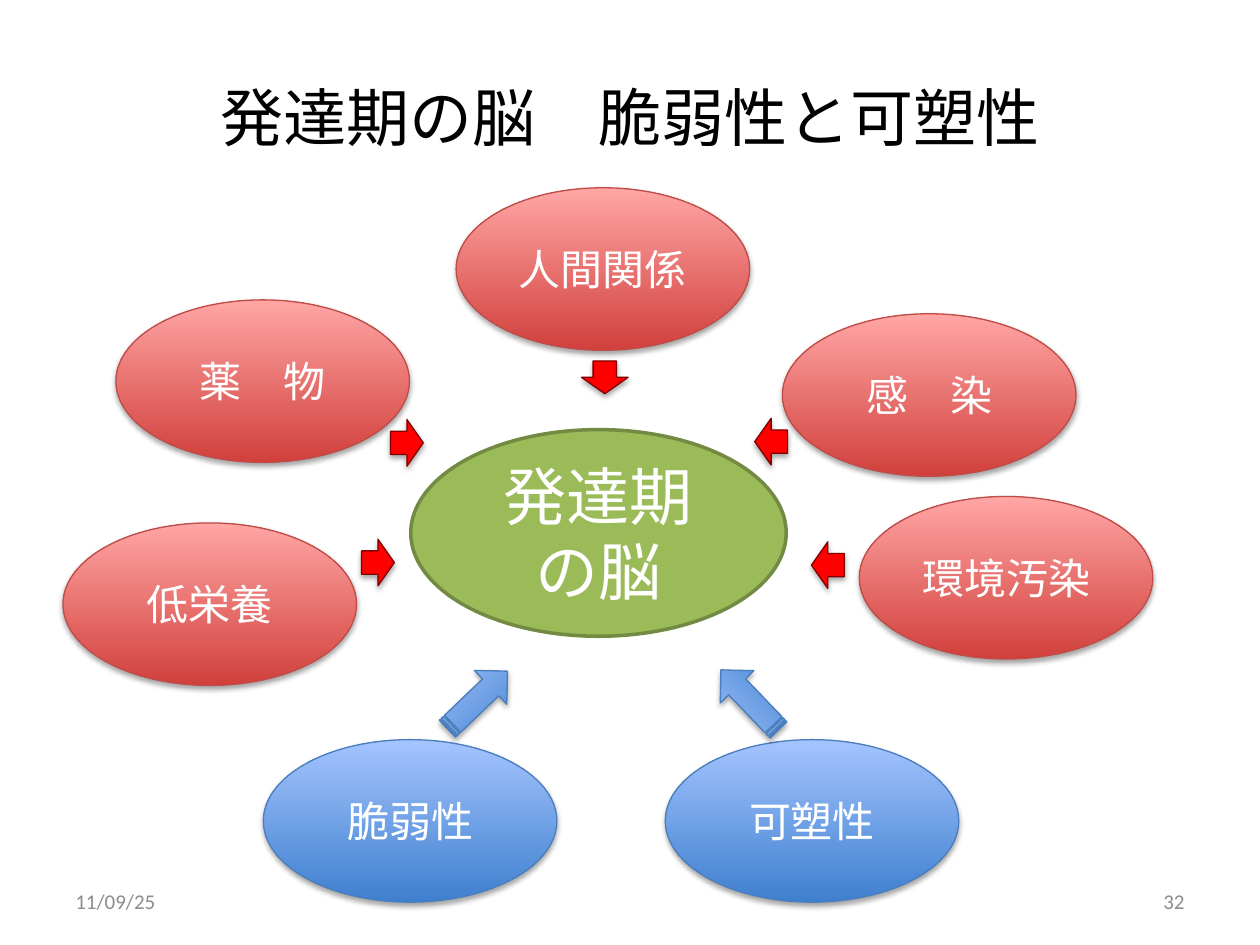
from lxml import etree
from pptx import Presentation
from pptx.dml.color import RGBColor
from pptx.enum.shapes import MSO_SHAPE
from pptx.enum.text import MSO_ANCHOR, PP_ALIGN
from pptx.oxml.ns import qn
from pptx.util import Inches, Pt

ELLIPSE = MSO_SHAPE.OVAL
ARROW = MSO_SHAPE.RIGHT_ARROW
STRIPED_ARROW = MSO_SHAPE.STRIPED_RIGHT_ARROW
LEFT, CENTER, RIGHT = PP_ALIGN.LEFT, PP_ALIGN.CENTER, PP_ALIGN.RIGHT
MIDDLE = MSO_ANCHOR.MIDDLE

# Each style is the fill (bottom and top colour, or a single one) and the line colour
RED = (("D1403C", "FFA6A5"), "BF4C48")
BLUE = (("3F80CE", "A4C4FF"), "4B7EBC")
BRIGHT_RED = (("FF0000",), "800000")
GREEN = (("9BBB59",), "738A42")

FACTOR_SIZE = (2.33, 1.29)
SMALL_ARROW_SIZE = (0.26, 0.37)
LARGE_ARROW_SIZE = (0.66, 0.37)


def rgb(value):
    return RGBColor.from_string(value)


class SlideBuilder:
    font = "Calibri"

    def __init__(self, slide):
        self.slide = slide

    def set_text(self, frame, text, size, color, align):
        frame.word_wrap = True
        frame.vertical_anchor = MIDDLE
        frame.text = text
        paragraph = frame.paragraphs[0]
        paragraph.alignment = align
        font = paragraph.runs[0].font
        font.name = self.font
        font.size = Pt(size)
        font.color.rgb = rgb(color)

    def label(self, text, box, size, color, align):
        textbox = self.slide.shapes.add_textbox(*map(Inches, box))
        self.set_text(textbox.text_frame, text, size, color, align)

    def shape(self, kind, position, size, style, line_width=0.75, shadow=True):
        colors, line_color = style
        shape = self.slide.shapes.add_shape(kind, *map(Inches, position + size))
        if len(colors) == 1:
            shape.fill.solid()
            shape.fill.fore_color.rgb = rgb(colors[0])
        else:
            shape.fill.gradient()
            shape.fill.gradient_angle = 90
            for stop, color in zip(shape.fill.gradient_stops, colors):
                stop.color.rgb = rgb(color)
        shape.line.color.rgb = rgb(line_color)
        shape.line.width = Pt(line_width)
        shape.shadow.inherit = False
        if shadow:
            self.drop_shadow(shape)
        return shape

    def drop_shadow(self, shape):
        effects = shape._element.spPr.find(qn("a:effectLst"))
        outer = etree.SubElement(
            effects, qn("a:outerShdw"), blurRad=str(Pt(3.1)), dist=str(Pt(1.8)),
            dir="5400000", rotWithShape="0")
        black = etree.SubElement(outer, qn("a:srgbClr"), val="000000")
        etree.SubElement(black, qn("a:alpha"), val="35000")

    def factor(self, text, position, style):
        ellipse = self.shape(ELLIPSE, position, FACTOR_SIZE, style)
        self.set_text(ellipse.text_frame, text, 24, "FFFFFF", CENTER)

    def brain(self, text, position, size):
        ellipse = self.shape(ELLIPSE, position, size, GREEN, 2, shadow=False)
        self.set_text(ellipse.text_frame, text, 36, "FFFFFF", CENTER)

    def arrow(self, kind, position, size, style, rotation):
        self.shape(kind, position, size, style).rotation = rotation


def main():
    prs = Presentation()
    prs.slide_width, prs.slide_height = Inches(10), Inches(7.5)
    builder = SlideBuilder(prs.slides.add_slide(prs.slide_layouts[6]))

    builder.label("11/09/25", (0.5, 6.95, 2.33, 0.4), 12, "8C8C8C", LEFT)
    builder.label("発達期の脳　脆弱性と可塑性", (0.5, 0.3, 9, 1.25), 36, "000000", CENTER)

    for name, position in (
        ("人間関係", (3.62, 1.49)),
        ("環境汚染", (6.82, 3.94)),
        ("感　染", (6.21, 2.49)),
        ("薬　物", (0.92, 2.38)),
        ("低栄養", (0.5, 4.15)),
    ):
        builder.factor(name, position, RED)

    builder.brain("発達期の脳", (3.26, 3.41), (2.98, 1.64))

    for position, rotation in (
        ((2.87, 4.28), 0),
        ((3.1, 3.33), 0),
        ((5.99, 3.32), 180),
        ((6.44, 4.3), 180),
        ((4.67, 2.81), 90),
    ):
        builder.arrow(ARROW, position, SMALL_ARROW_SIZE, BRIGHT_RED, rotation)

    for name, left in (("脆弱性", 2.09), ("可塑性", 5.28)):
        builder.factor(name, (left, 5.87), BLUE)
    for left, rotation in ((3.46, 316.2), (5.62, 226.2)):
        builder.arrow(STRIPED_ARROW, (left, 5.37), LARGE_ARROW_SIZE, BLUE, rotation)

    builder.label("32", (7.17, 6.95, 2.33, 0.4), 12, "8C8C8C", RIGHT)
    prs.save("out.pptx")


if __name__ == "__main__":
    main()
